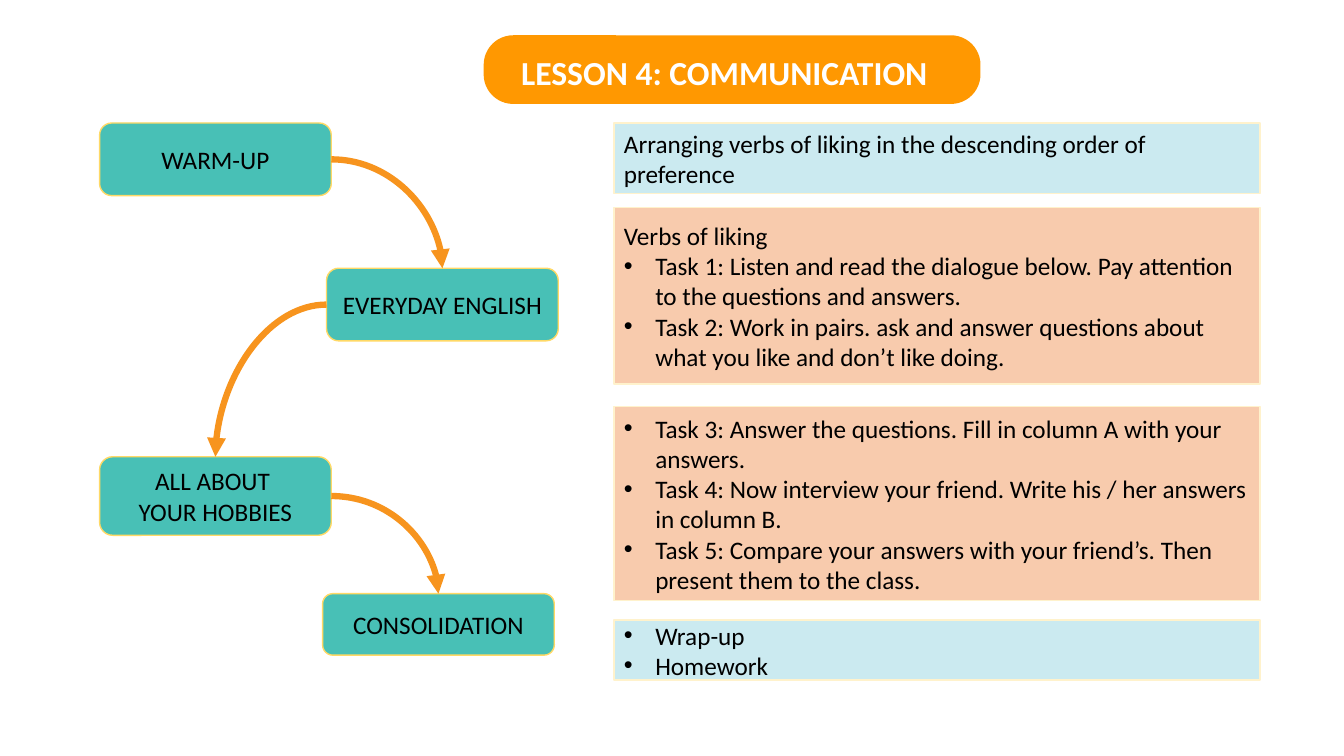
from itertools import pairwise

from lxml.etree import SubElement
from pptx import Presentation
from pptx.dml.color import RGBColor
from pptx.enum.shapes import MSO_CONNECTOR as Link, MSO_SHAPE as Form
from pptx.enum.text import MSO_ANCHOR as Anchor, MSO_AUTO_SIZE as Fit, PP_ALIGN as Align
from pptx.oxml.ns import qn
from pptx.util import Cm, Pt

TEAL = RGBColor(0x48, 0xC0, 0xB6)
GOLD = RGBColor(0xFF, 0xD9, 0x66)
CREAM = RGBColor(0xFF, 0xF2, 0xCC)
BLUE = RGBColor(0xCB, 0xEA, 0xF0)
PEACH = RGBColor(0xF8, 0xCB, 0xAD)
AMBER = RGBColor(0xFF, 0x98, 0x01)
FLAME = RGBColor(0xF7, 0x94, 0x1E)
BLACK = RGBColor(0, 0, 0)
WHITE = RGBColor(0xFF, 0xFF, 0xFF)

FRAME = {"word_wrap": True, "auto_size": Fit.NONE, "vertical_anchor": Anchor.MIDDLE}
PLAIN = {"name": "Calibri", "size": Pt(18), "bold": False}
HEAD = {"name": "Calibri", "size": Pt(24), "bold": True}
LEFT = {"alignment": Align.LEFT, "space_before": Pt(0)}
MID = {"alignment": Align.CENTER, "space_before": Pt(0)}
INDENT = Cm(0.79)

# Boxes are left, top, width, height in centimetres.
TITLE_BOX = (12.19, 0.89, 12.52, 1.73)
STEPS = [
    ("WARM-UP", (2.51, 3.1, 5.84, 1.83)),
    ("EVERYDAY ENGLISH", (8.23, 6.76, 5.84, 1.83)),
    ("ALL ABOUT \nYOUR HOBBIES", (2.51, 11.51, 5.84, 1.98)),
    ("CONSOLIDATION", (8.13, 14.96, 5.84, 1.55)),
]
PANELS = [
    (BLUE, (15.47, 3.1, 16.28, 1.78),
     ["Arranging verbs of liking in the descending order of preference"], []),
    (PEACH, (15.47, 5.23, 16.28, 4.45), ["Verbs of liking"], [
        "Task 1: Listen and read the dialogue below. Pay attention to the questions and answers.",
        "Task 2: Work in pairs. ask and answer questions about what you like and don’t like doing.",
    ]),
    (PEACH, (15.47, 10.24, 16.28, 4.9), [], [
        "Task 3: Answer the questions. Fill in column A with your answers.",
        "Task 4: Now interview your friend. Write his / her answers in column B.",
        "Task 5: Compare your answers with your friend’s. Then present them to the class.",
    ]),
    (BLUE, (15.47, 15.62, 16.28, 1.52), [], ["Wrap-up", "Homework"]),
]


def apply(item, values):
    for name, value in values.items():
        setattr(item, name, value)


def place(shape, box):
    apply(shape, dict(zip(("left", "top", "width", "height"), map(Cm, box))))


def paint(shape, fill, edge):
    shape.fill.solid()
    shape.fill.fore_color.rgb = fill
    shape.line.color.rgb = edge
    shape.line.width = Pt(1)


def write(shape, text, font, para, color):
    frame = shape.text_frame
    frame.text = text
    apply(frame, FRAME)
    for line in frame.paragraphs:
        apply(line, para)
        for run in line.runs:
            apply(run.font, font)
            run.font.color.rgb = color


def add_round(slide, box, fill):
    shape = slide.shapes.add_shape(Form.ROUNDED_RECTANGLE, *map(Cm, box))
    shape.shadow.inherit = False
    shape.fill.solid()
    shape.fill.fore_color.rgb = fill
    return shape


def add_title(slide, box):
    left, top, width, height = box
    bar = add_round(slide, box, AMBER)
    bar.adjustments[0] = 0.43
    bar.line.fill.background()
    title = slide.shapes.title
    place(title, (left + 0.69, top + 0.28, width, height - 0.46))
    write(title, "LESSON 4: COMMUNICATION", HEAD, LEFT, WHITE)
    bar._element.addnext(title._element)


def add_step(slide, text, box):
    step = add_round(slide, box, TEAL)
    paint(step, TEAL, GOLD)
    write(step, text, PLAIN, MID, BLACK)


def add_arrow(slide, box, goal):
    """Curve from the facing side of one step to the top of the next."""
    left, top, width, height = box
    start = left + width if goal[0] > left else left
    ends = (start, top + height / 2, goal[0] + goal[2] / 2, goal[1])
    arrow = slide.shapes.add_connector(Link.CURVE, *map(Cm, ends))
    arrow.line.color.rgb = FLAME
    arrow.line.width = Pt(4.5)
    props = arrow._element.spPr
    props.find(qn("a:prstGeom")).set("prst", "curvedConnector2")
    SubElement(props.find(qn("a:ln")), qn("a:tailEnd"), type="triangle")
    SubElement(props, qn("a:effectLst"))


def set_bullet(para, on):
    props = para._p.get_or_add_pPr()
    props.set("marL", str(INDENT if on else 0))
    props.set("indent", str(-INDENT if on else 0))
    if on:
        SubElement(props, qn("a:buFont"), typeface="Arial")
        SubElement(props, qn("a:buChar"), char="•")
    else:
        SubElement(props, qn("a:buNone"))


def fill_panel(panel, fill, box, intro, tasks):
    place(panel, box)
    paint(panel, fill, CREAM)
    write(panel, "\n".join(intro + tasks), PLAIN, LEFT, BLACK)
    for spot, para in enumerate(panel.text_frame.paragraphs):
        set_bullet(para, spot >= len(intro))


def main():
    deck = Presentation()
    deck.slide_width, deck.slide_height = Cm(33.87), Cm(19.05)
    slide = deck.slides.add_slide(deck.slide_layouts.get_by_name("Comparison"))
    add_title(slide, TITLE_BOX)
    for text, box in STEPS:
        add_step(slide, text, box)
    for (_, box), (_, goal) in pairwise(STEPS):
        add_arrow(slide, box, goal)
    bodies = [part for part in slide.placeholders if part.placeholder_format.idx in range(1, 5)]
    for body, panel in zip(bodies, PANELS):
        fill_panel(body, *panel)
    deck.save("out.pptx")


if __name__ == "__main__":
    main()
